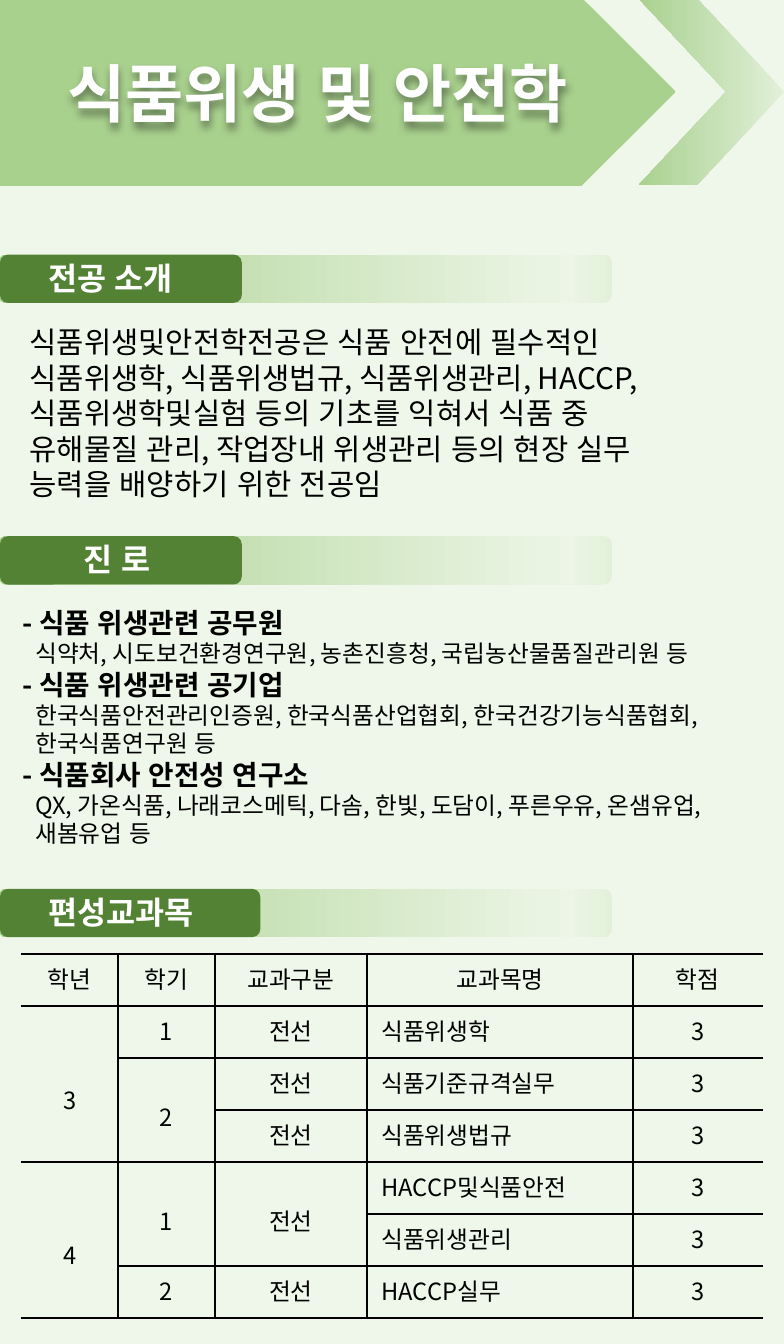
from lxml.etree import SubElement
from pptx import Presentation
from pptx.dml.color import RGBColor
from pptx.enum.lang import MSO_LANGUAGE_ID as Language
from pptx.enum.shapes import MSO_SHAPE as Shape
from pptx.enum.text import MSO_ANCHOR as Anchor, PP_ALIGN as Align
from pptx.oxml.ns import qn
from pptx.util import Inches, Pt

FONT = "Noto Sans CJK KR"
BLACK = RGBColor(0x00, 0x00, 0x00)
WHITE = RGBColor(0xFF, 0xFF, 0xFF)
PALE_GREEN = RGBColor(0xEE, 0xF7, 0xE9)
LIGHT_GREEN = RGBColor(0xA9, 0xD1, 0x8E)
DARK_GREEN = RGBColor(0x54, 0x82, 0x35)
CHEVRON_FADE = [(0, "E2F0D9"), (50, "C5E0B3"), (71, "B9DAA4"), (100, "A9D18E")]
BAR_FADE = [(0, "E2F0D9"), (7, "ECF5E6"), (10, "EAF4E3"), (100, "A9D18E")]

INTRODUCTION = [
    "식품위생및안전학전공은 식품 안전에 필수적인",
    "식품위생학, 식품위생법규, 식품위생관리, HACCP,",
    "식품위생학및실험 등의 기초를 익혀서 식품 중",
    "유해물질 관리, 작업장내 위생관리 등의 현장 실무",
    "능력을 배양하기 위한 전공임",
]
CAREERS = [
    "- 식품 위생관련 공무원",
    "식약처, 시도보건환경연구원, 농촌진흥청, 국립농산물품질관리원 등",
    "- 식품 위생관련 공기업",
    "한국식품안전관리인증원, 한국식품산업협회, 한국건강기능식품협회,",
    "한국식품연구원 등",
    "- 식품회사 안전성 연구소",
    "QX, 가온식품, 나래코스메틱, 다솜, 한빛, 도담이, 푸른우유, 온샘유업,",
    "새봄유업 등",
]
COURSES = [
    ["학년", "학기", "교과구분", "교과목명", "학점"],
    ["3", "1", "전선", "식품위생학", "3"],
    ["", "2", "전선", "식품기준규격실무", "3"],
    ["", "", "전선", "식품위생법규", "3"],
    ["4", "1", "전선", "HACCP및식품안전", "3"],
    ["", "", "", "식품위생관리", "3"],
    ["", "2", "전선", "HACCP실무", "3"],
]
COLUMN_WIDTHS = [0.68, 0.68, 1.07, 1.87, 0.91]
# (row, column): number of rows spanned
SPANS = {(1, 0): 3, (2, 1): 2, (4, 0): 3, (4, 1): 2, (4, 2): 2}


class Poster:
    def __init__(self, slide):
        self.slide = slide
        slide.background.fill.solid()
        slide.background.fill.fore_color.rgb = PALE_GREEN

    def style(self, paragraph, size, color=BLACK, bold=False, align=Align.LEFT):
        paragraph.alignment = align
        for run in paragraph.runs:
            font = run.font
            font.size, font.bold, font.name = Pt(size), bold, FONT
            font.color.rgb = color
            font.language_id = Language.KOREAN
            SubElement(font._element, qn("a:ea"), typeface=FONT)

    def block(self, kind, box, color=None, fade=None):
        """Adds a preset shape with a plain fill or a right-to-left fade."""
        shape = self.slide.shapes.add_shape(kind, *map(Inches, box))
        shape.shadow.inherit = False
        shape.line.fill.background()
        if fade:
            shape.fill.gradient()
            shape.fill.gradient_angle = 180
            stops = shape._element.spPr.find(qn("a:gradFill")).find(qn("a:gsLst"))
            stops.clear()
            for position, tone in fade:
                stop = SubElement(stops, qn("a:gs"), pos=str(position * 1000))
                SubElement(stop, qn("a:srgbClr"), val=tone)
        else:
            shape.fill.solid()
            shape.fill.fore_color.rgb = color
        return shape

    def title(self, text, box):
        title = self.slide.shapes.title
        title.left, title.top, title.width, title.height = map(Inches, box)
        title.text_frame.text = text
        title.text_frame.vertical_anchor = Anchor.TOP
        self.style(title.text_frame.paragraphs[0], 32, WHITE, True, Align.CENTER)
        effects = SubElement(title._element.spPr, qn("a:effectLst"))
        shadow = SubElement(effects, qn("a:outerShdw"), blurRad="50800",
                            dist="38100", dir="5400000")
        tone = SubElement(shadow, qn("a:srgbClr"), val="000000")
        SubElement(tone, qn("a:alpha"), val="40000")
        self.slide.shapes._spTree.append(title._element)

    def text(self, lines, box):
        """Adds a text box and returns its paragraphs for styling."""
        frame = self.slide.shapes.add_textbox(*map(Inches, box)).text_frame
        frame.word_wrap = True
        frame.text = "\n".join(lines)
        return frame.paragraphs

    def section(self, heading, top, label_width, text_left, text_width, align):
        self.block(Shape.ROUNDED_RECTANGLE, (-0.01, top, 4.31, 0.34), fade=BAR_FADE)
        self.block(Shape.ROUNDED_RECTANGLE, (0, top, label_width, 0.34), DARK_GREEN)
        line, = self.text([heading], (text_left, top - 0.02, text_width, 0.37))
        self.style(line, 16, WHITE, True, align)

    def introduction(self, lines, box):
        for line in self.text(lines, box):
            self.style(line, 15)

    def careers(self, lines, box):
        for line in self.text(lines, box):
            is_field = line.text.startswith("-")
            self.style(line, 14 if is_field else 12, bold=is_field)
            if not is_field:
                line._p.get_or_add_pPr().set("indent", str(Inches(0.09)))

    def borders(self, cell, hidden):
        properties = cell._tc.get_or_add_tcPr()
        for place, side in enumerate(("lnL", "lnR", "lnT", "lnB")):
            line = properties.makeelement(qn(f"a:{side}"), {"w": str(Pt(1))})
            properties.insert(place, line)
            if side == hidden:
                SubElement(line, qn("a:noFill"))
            else:
                fill = SubElement(line, qn("a:solidFill"))
                SubElement(fill, qn("a:srgbClr"), val=str(BLACK))

    def courses(self, rows, widths, spans, box):
        table = self.slide.shapes.add_table(
            len(rows), len(widths), *map(Inches, box)).table
        table.first_row = table.horz_banding = False
        for column, width in zip(table.columns, widths):
            column.width = Inches(width)
        outer_sides = {0: "lnL", len(widths) - 1: "lnR"}
        for r, row in enumerate(rows):
            for c, value in enumerate(row):
                cell = table.cell(r, c)
                cell.fill.background()
                self.borders(cell, outer_sides.get(c))
                cell.text = value
                is_course = c == 3 and r > 0
                self.style(cell.text_frame.paragraphs[0], 12,
                           align=Align.LEFT if is_course else Align.CENTER)
                cell.margin_top = Inches(0.05 + 0.24 * (spans.get((r, c), 1) - 1))
        for (r, c), count in spans.items():
            table.cell(r, c).merge(table.cell(r + count - 1, c))


def main():
    prs = Presentation()
    prs.slide_width, prs.slide_height = Inches(5.51), Inches(9.45)
    poster = Poster(prs.slides.add_slide(prs.slide_layouts[5]))

    banner = poster.block(Shape.PENTAGON, (0, -0.01, 4.74, 1.31), LIGHT_GREEN)
    banner.line.color.rgb = LIGHT_GREEN
    banner.line.width = Pt(1)
    chevron = poster.block(Shape.CHEVRON, (4.49, -0.01, 1.02, 1.31), fade=CHEVRON_FADE)
    chevron.adjustments[0] = 0.6
    poster.title("식품위생 및 안전학", (-0.52, 0.33, 5.51, 0.64))

    poster.section("전공 소개", 1.79, 1.7, 0.24, 1.31, Align.LEFT)
    poster.introduction(INTRODUCTION, (0.11, 2.23, 5.12, 1.36))
    poster.section("진 로", 3.77, 1.7, 0.13, 1.39, Align.CENTER)
    poster.careers(CAREERS, (0.06, 4.21, 5.4, 1.82))
    poster.section("편성교과목", 6.25, 1.83, 0.24, 1.46, Align.LEFT)
    poster.courses(COURSES, COLUMN_WIDTHS, SPANS, (0.15, 6.71, 5.21, 2.56))
    prs.save("out.pptx")


if __name__ == "__main__":
    main()
